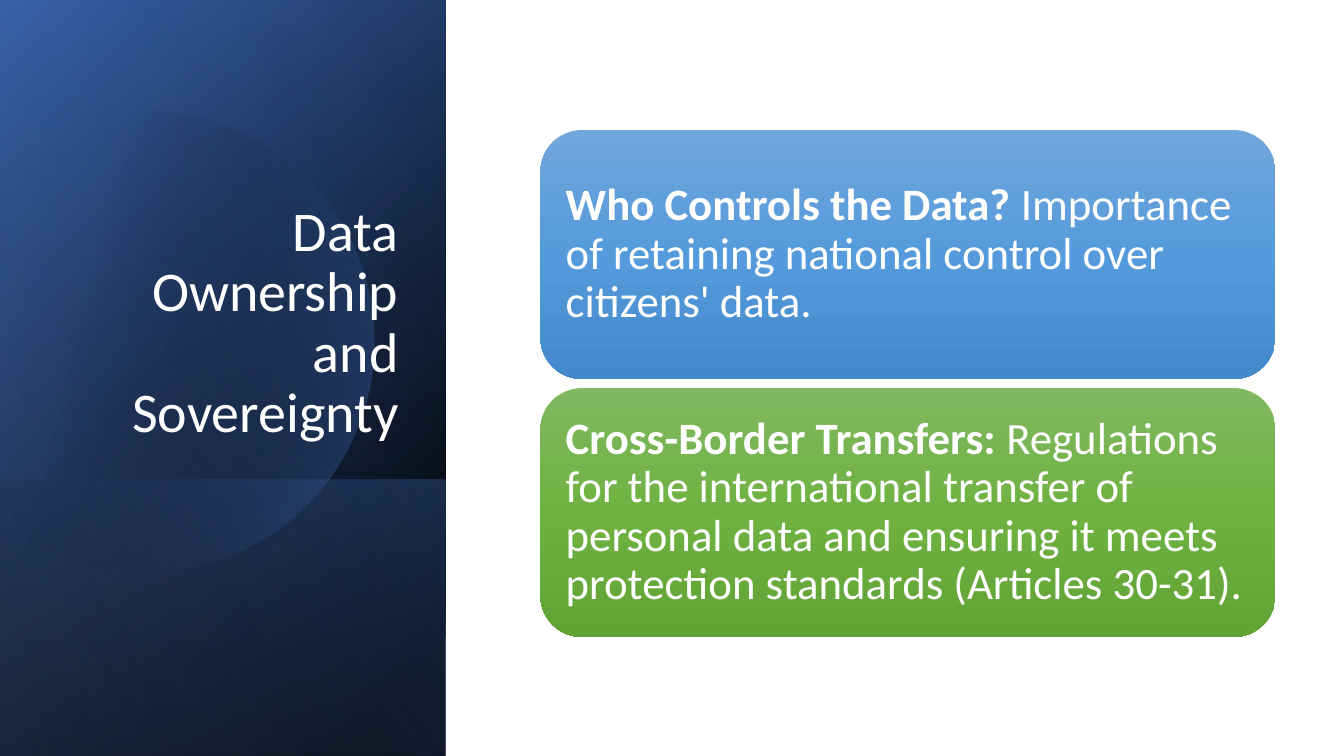
from math import cos, radians, sin

from pptx import Presentation
from pptx.dml.color import RGBColor
from pptx.enum.shapes import MSO_SHAPE as Shape
from pptx.enum.text import MSO_ANCHOR as Anchor, PP_ALIGN as Align
from pptx.oxml import parse_xml
from pptx.oxml.ns import nsdecls
from pptx.util import Inches, Pt

BLACK = RGBColor(0x00, 0x00, 0x00)
WHITE = RGBColor(0xFF, 0xFF, 0xFF)
NAVY = RGBColor(0x2F, 0x55, 0x97)
BLUE = RGBColor(0x44, 0x72, 0xC4)
PALE_BLUE = RGBColor(0x8F, 0xAA, 0xDC)
SKY = [RGBColor(0x71, 0xA6, 0xDB), RGBColor(0x55, 0x9B, 0xDB), RGBColor(0x44, 0x8A, 0xCA)]
GREEN = [RGBColor(0x81, 0xB8, 0x61), RGBColor(0x6F, 0xB2, 0x42), RGBColor(0x62, 0xA3, 0x36)]

FONT = "Calibri"
TITLE = "Data Ownership and Sovereignty"
CARDS = [
    ("Who Controls the Data?",
     " Importance of retaining national control over citizens' data.", SKY),
    ("Cross-Border Transfers:",
     " Regulations for the international transfer of personal data and ensuring "
     "it meets protection standards (Articles 30-31).", GREEN),
]

WIDTH, HEIGHT = 13.33, 7.5
PANEL_WIDTH = 4.42
FOOT_HEIGHT = 2.74
BASE = (HEIGHT, 50, [(8, BLACK, 100), (100, NAVY, 100)])
GLOW = (HEIGHT, 30, [(0, BLACK, 0), (99, BLUE, 46)])
FOOT = (FOOT_HEIGHT, 130, [(2, BLUE, 29), (100, BLACK, 30)])
SHEEN = (HEIGHT, 120, [(0, BLACK, 0), (99, PALE_BLUE, 11)])
DISC_STOPS = [(29, BLACK, 0), (100, BLUE, 43)]
DISC_X, DISC_Y, DISC_RADIUS, DISC_ANGLE = 1.42, 3.39, 2.29, 14
DISC_CUT, DISC_STEPS = 133, 76
TITLE_BOX = (0.64, 1.84, 3.41, 2.62)
CARD_LEFT, CARD_TOP, CARD_WIDTH, CARD_HEIGHT, CARD_PITCH = 5.36, 1.29, 7.29, 2.47, 2.56
CARD_INSET = 0.13


def paint(shape, stops, angle):
    """Fill a shape with a linear gradient of (position, colour, opacity) stops."""
    shape.shadow.inherit = False
    shape.line.fill.background()
    shape.fill.background()
    marks = "".join(
        f'<a:gs pos="{position * 1000}"><a:srgbClr val="{colour}">'
        f'<a:alpha val="{opacity * 1000}"/></a:srgbClr></a:gs>'
        for position, colour, opacity in stops)
    gradient = parse_xml(
        f'<a:gradFill {nsdecls("a")} rotWithShape="1"><a:gsLst>{marks}</a:gsLst>'
        f'<a:lin ang="{angle * 60000}" scaled="0"/></a:gradFill>')
    properties = shape._element.spPr
    properties.replace(properties.find("{*}noFill"), gradient)


def add_layer(slide, height, angle, stops):
    """Add a turned, mirrored panel layer that stands on the slide's bottom edge."""
    left = (PANEL_WIDTH - height) / 2
    top = HEIGHT - (height + PANEL_WIDTH) / 2
    layer = slide.shapes.add_shape(
        Shape.RECTANGLE, Inches(left), Inches(top), Inches(height), Inches(PANEL_WIDTH))
    layer.rotation = 90
    layer._element.spPr.xfrm.set("flipH", "1")
    paint(layer, stops, angle)


def add_disc(slide):
    """Add the disc that is cut straight on its left side."""
    angles = [radians(DISC_CUT * (2 * step / DISC_STEPS - 1)) for step in range(DISC_STEPS + 1)]
    points = [(Inches(DISC_X + DISC_RADIUS * cos(angle)),
               Inches(DISC_Y + DISC_RADIUS * sin(angle))) for angle in angles]
    builder = slide.shapes.build_freeform(*points[0])
    builder.add_line_segments(points[1:], close=True)
    paint(builder.convert_to_shape(), DISC_STOPS, DISC_ANGLE)


def write(shape, runs, size, align, anchor):
    """Write one paragraph of (text, bold) runs into a shape."""
    frame = shape.text_frame
    frame.word_wrap = True
    frame.vertical_anchor = anchor
    paragraph = frame.paragraphs[0]
    paragraph.alignment = align
    paragraph.line_spacing = 0.9
    paragraph.font.name = FONT
    paragraph.font.size = Pt(size)
    paragraph.font.color.rgb = WHITE
    for text, bold in runs:
        run = paragraph.add_run()
        run.text = text
        run.font.bold = bold


def add_card(slide, row, heading, detail, colours):
    """Add one rounded card in its row."""
    card = slide.shapes.add_shape(
        Shape.ROUNDED_RECTANGLE, Inches(CARD_LEFT), Inches(CARD_TOP + row * CARD_PITCH),
        Inches(CARD_WIDTH), Inches(CARD_HEIGHT))
    paint(card, [(50 * index, colour, 100) for index, colour in enumerate(colours)], 90)
    frame = card.text_frame
    frame.margin_left = frame.margin_right = Inches(CARD_INSET)
    frame.margin_top = frame.margin_bottom = Inches(CARD_INSET)
    write(card, [(heading, True), (detail, False)], 32, Align.LEFT, Anchor.MIDDLE)


def main():
    """Build the slide and save it."""
    presentation = Presentation()
    presentation.slide_width = Inches(WIDTH)
    presentation.slide_height = Inches(HEIGHT)
    slide = presentation.slides.add_slide(presentation.slide_layouts[6])
    for layer in (BASE, GLOW, FOOT):
        add_layer(slide, *layer)
    add_disc(slide)
    add_layer(slide, *SHEEN)
    title = slide.shapes.add_textbox(*map(Inches, TITLE_BOX))
    write(title, [(TITLE, False)], 40, Align.RIGHT, Anchor.BOTTOM)
    for row, card in enumerate(CARDS):
        add_card(slide, row, *card)
    presentation.save("out.pptx")


if __name__ == "__main__":
    main()
